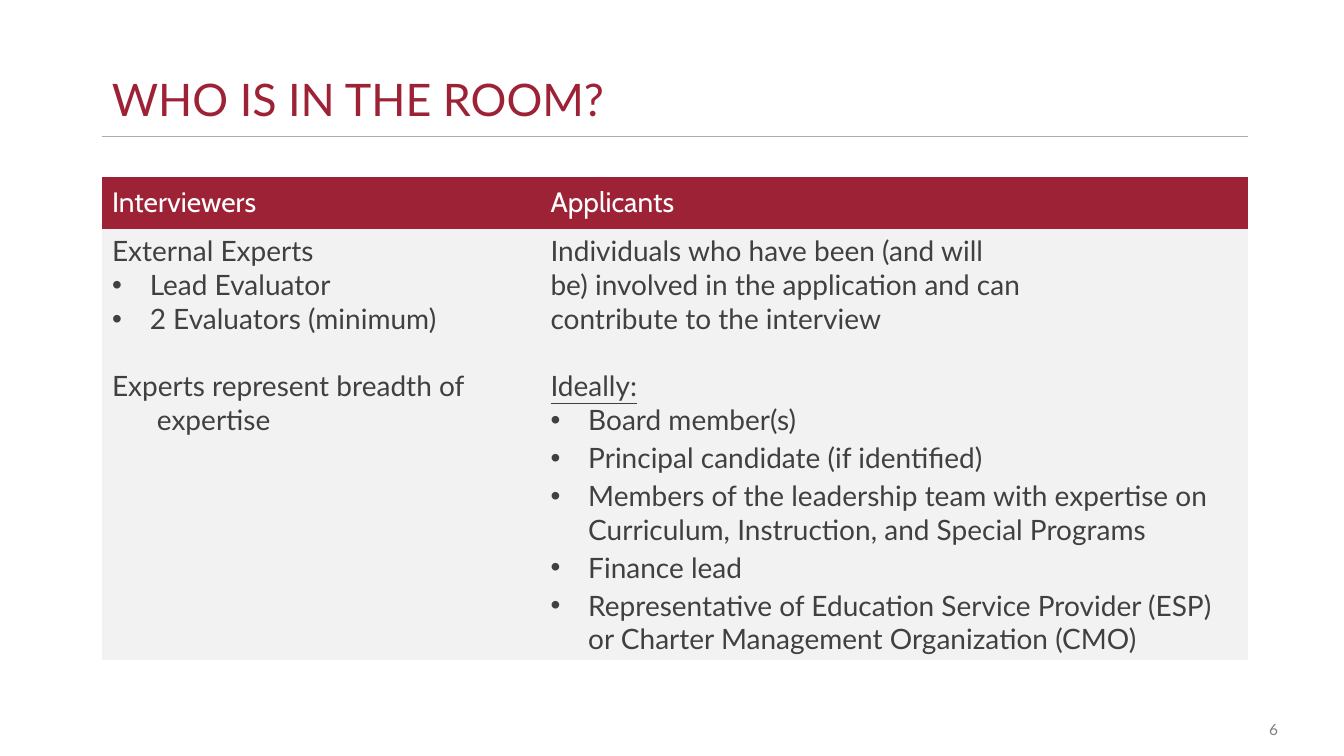
import pptx
import pptx.dml.color
import pptx.enum.shapes
import pptx.enum.text
import pptx.oxml.ns
import pptx.util
from lxml import etree

Cm = pptx.util.Cm
Pt = pptx.util.Pt
qn = pptx.oxml.ns.qn
Align = pptx.enum.text.PP_ALIGN
Anchor = pptx.enum.text.MSO_ANCHOR

COLORS = {
    "red": "9D2235",
    "text": "404040",
    "cell": "F2F2F2",
    "rule": "AFABAB",
    "number": "808080",
    "white": "FFFFFF",
}
LEFT, WIDTH = Cm(2.57), Cm(28.88)
BULLET_INDENT = Cm(0.95)
BLANK_LINE = 24
PLAIN_TABLE_STYLE = "{2D5ABB26-0587-4C30-8999-92F81FD0307C}"

HEADERS = ["Interviewers", "Applicants"]
# Each paragraph: text, then the options of add_paragraph
INTERVIEWERS = [
    ("External Experts", {}),
    ("Lead Evaluator", {"bullet": True}),
    ("2 Evaluators (minimum)", {"bullet": True}),
    ("Experts represent breadth of expertise",
     {"hanging": Cm(1.13), "before": BLANK_LINE}),
]
APPLICANTS = [
    ("Individuals who have been (and will", {}),
    ("be) involved in the application and can", {}),
    ("contribute to the interview", {}),
    ("Ideally:", {"before": BLANK_LINE, "underline": True}),
] + [
    (member, {"bullet": True, "after": 3})
    for member in (
        "Board member(s)",
        "Principal candidate (if identified)",
        "Members of the leadership team with expertise on "
        "Curriculum, Instruction, and Special Programs",
        "Finance lead",
        "Representative of Education Service Provider (ESP) "
        "or Charter Management Organization (CMO)",
    )
]


def rgb(name):
    return pptx.dml.color.RGBColor.from_string(COLORS[name])


def add_run(paragraph, text, size, color, font="Lato", underline=None):
    run = paragraph.add_run()
    run.text = text
    run.font.name = font
    run.font.size = Pt(size)
    run.font.color.rgb = rgb(color)
    run.font.underline = underline


def set_hanging_indent(paragraph, indent, bullet):
    properties = paragraph._p.get_or_add_pPr()
    properties.set("marL", str(int(indent)))
    properties.set("indent", str(-int(indent)))
    if bullet:
        etree.SubElement(properties, qn("a:buFont"), typeface="Arial")
        etree.SubElement(properties, qn("a:buChar"), char="•")


def add_paragraph(frame, text, bullet=False, hanging=None, before=0, after=0,
                  underline=None):
    """Fill the frame's empty first paragraph, or append a new one."""
    first = frame.paragraphs[0]
    paragraph = frame.add_paragraph() if first.runs else first
    paragraph.space_before = Pt(before)
    paragraph.space_after = Pt(after)
    if bullet or hanging:
        set_hanging_indent(paragraph, hanging or BULLET_INDENT, bullet)
    add_run(paragraph, text, 20, "text", underline=underline)


def add_text_box(slide, box, text, size, color, anchor, align, spacing=None):
    frame = slide.shapes.add_textbox(*box).text_frame
    frame.word_wrap = True
    frame.vertical_anchor = anchor
    paragraph = frame.paragraphs[0]
    paragraph.alignment = align
    paragraph.line_spacing = spacing
    add_run(paragraph, text, size, color)


def add_rule(slide, top):
    rule = slide.shapes.add_connector(
        pptx.enum.shapes.MSO_CONNECTOR.STRAIGHT, LEFT, top, LEFT + WIDTH, top)
    rule.line.color.rgb = rgb("rule")
    rule.line.width = Pt(0.75)
    etree.SubElement(rule._element.spPr, qn("a:effectLst"))


def fill_cell(cell, color):
    cell.fill.solid()
    cell.fill.fore_color.rgb = rgb(color)


def add_people_table(slide):
    row_heights = [Cm(1.32), Cm(10.85)]
    table = slide.shapes.add_table(
        2, 2, LEFT, Cm(4.45), WIDTH, sum(row_heights)).table
    table.first_row = False
    table.horz_banding = False
    table._tbl.tblPr.find(qn("a:tableStyleId")).text = PLAIN_TABLE_STYLE
    for row, height in zip(table.rows, row_heights):
        row.height = height
    for column, width in zip(table.columns, (Cm(11.05), Cm(17.83))):
        column.width = width
    for index, (header, people) in enumerate(
            zip(HEADERS, (INTERVIEWERS, APPLICANTS))):
        header_cell, body_cell = table.cell(0, index), table.cell(1, index)
        fill_cell(header_cell, "red")
        header_cell.vertical_anchor = Anchor.MIDDLE
        add_run(header_cell.text_frame.paragraphs[0], header, 20, "white",
                font="Cabin")
        fill_cell(body_cell, "cell")
        for text, options in people:
            add_paragraph(body_cell.text_frame, text, **options)


def main():
    presentation = pptx.Presentation()
    presentation.slide_width = Cm(33.87)
    presentation.slide_height = Cm(19.05)
    slide = presentation.slides.add_slide(presentation.slide_layouts[6])
    add_text_box(slide, (Cm(29.82), Cm(18.03), Cm(2.64), Cm(0.74)), "6", 11,
                 "number", Anchor.TOP, Align.RIGHT)
    add_rule(slide, Cm(3.43))
    add_people_table(slide)
    add_text_box(slide, (LEFT, Cm(0.25), WIDTH, Cm(3.05)),
                 "WHO IS IN THE ROOM?", 32, "red", Anchor.BOTTOM, Align.LEFT,
                 spacing=Pt(34))
    presentation.save("out.pptx")


if __name__ == "__main__":
    main()
